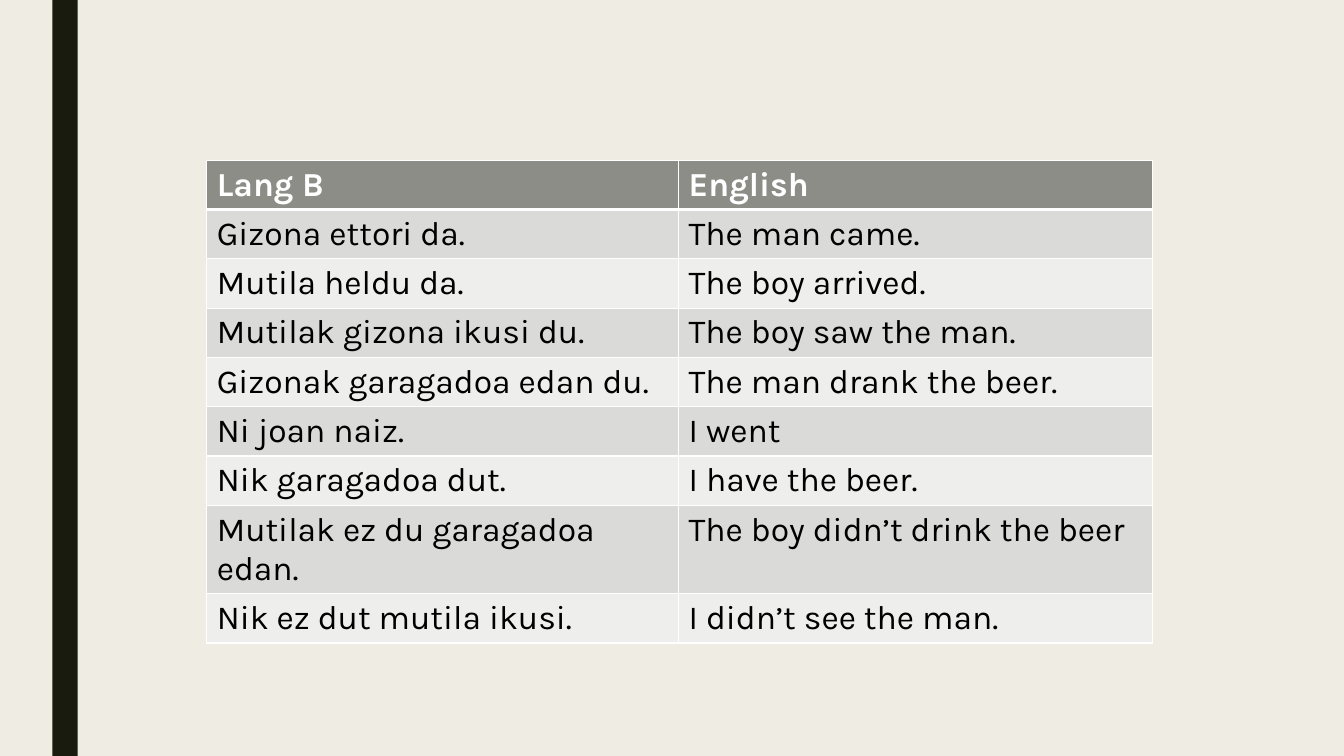
"""Build a slide with a table of Lang B sentences and their English translations."""
from dataclasses import dataclass

from pptx import Presentation
from pptx import util as u
from pptx.dml.color import RGBColor
from pptx.enum import shapes
from pptx.oxml import ns, xmlchemy
from pptx.slide import Slide
from pptx.table import _Cell

BACKGROUND = RGBColor(0xEF, 0xED, 0xE3)
BAR = RGBColor(0x19, 0x1B, 0x0E)
HEADER = RGBColor(0x8C, 0x8D, 0x86)
BAND_DARK = RGBColor(0xDA, 0xDB, 0xD9)
BAND_LIGHT = RGBColor(0xEE, 0xEE, 0xED)
WHITE = RGBColor(0xFF, 0xFF, 0xFF)
BLACK = RGBColor(0x00, 0x00, 0x00)

FONT = "Karla"
FONT_SIZE = u.Pt(24)
ROW_HEIGHT = u.Inches(0.41)
COLUMN_WIDTHS = (u.Inches(4.68), u.Inches(4.7))


@dataclass(frozen=True)
class Sentence:
    lang_b: str
    english: str


@dataclass(frozen=True)
class RowStyle:
    fill: RGBColor
    color: RGBColor
    bold: bool = False
    top: float = 1
    bottom: float = 1


SENTENCES = [
    Sentence("Lang B", "English"),
    Sentence("Gizona ettori da.", "The man came."),
    Sentence("Mutila heldu da.", "The boy arrived."),
    Sentence("Mutilak gizona ikusi du.", "The boy saw the man."),
    Sentence("Gizonak garagadoa edan du.", "The man drank the beer."),
    Sentence("Ni joan naiz.", "I went"),
    Sentence("Nik garagadoa dut.", "I have the beer."),
    Sentence("Mutilak ez du garagadoa edan.", "The boy didn’t drink the beer"),
    Sentence("Nik ez dut mutila ikusi.", "I didn’t see the man."),
]


def row_style(row: int) -> RowStyle:
    if row == 0:
        return RowStyle(HEADER, WHITE, bold=True, bottom=3)
    fill = BAND_DARK if row % 2 else BAND_LIGHT
    return RowStyle(fill, BLACK, top=3 if row == 1 else 1)


def add_border(cell: _Cell, side: str, width: float) -> None:
    ln = xmlchemy.OxmlElement(f"a:ln{side}")
    ln.set("w", str(u.Pt(width)))
    solid = xmlchemy.OxmlElement("a:solidFill")
    color = xmlchemy.OxmlElement("a:srgbClr")
    color.set("val", str(WHITE))
    solid.append(color)
    ln.append(solid)
    cell._tc.get_or_add_tcPr().append(ln)


def draw_cell(cell: _Cell, words: str, style: RowStyle) -> None:
    borders = {"L": 1, "R": 1, "T": style.top, "B": style.bottom}
    for side, width in borders.items():
        add_border(cell, side, width)
    cell.fill.solid()
    cell.fill.fore_color.rgb = style.fill
    r = cell.text_frame.paragraphs[0].add_run()
    r.text = words
    r.font.name = FONT
    r.font.size = FONT_SIZE
    r.font.bold = style.bold
    r.font.color.rgb = style.color


def draw_bar(s: Slide, height: int) -> None:
    sp = s.shapes.add_shape(
        shapes.MSO_SHAPE.RECTANGLE, u.Inches(0.52), 0, u.Inches(0.25), height
    )
    sp.shadow.inherit = False
    sp.fill.solid()
    sp.fill.fore_color.rgb = BAR
    sp.line.fill.background()


def draw_table(s: Slide, sentences: list[Sentence]) -> None:
    table = s.shapes.add_table(
        len(sentences), len(COLUMN_WIDTHS), u.Inches(2.05), u.Inches(1.59),
        sum(COLUMN_WIDTHS), ROW_HEIGHT * len(sentences),
    ).table
    for column, width in zip(table.columns, COLUMN_WIDTHS):
        column.width = width
    for row, sentence in enumerate(sentences):
        style = row_style(row)
        draw_cell(table.cell(row, 0), sentence.lang_b, style)
        draw_cell(table.cell(row, 1), sentence.english, style)


def main() -> None:
    prs = Presentation()
    prs.slide_width, prs.slide_height = u.Inches(13.33), u.Inches(7.5)
    s = prs.slides.add_slide(prs.slide_layouts[6])
    s.background.fill.solid()
    s.background.fill.fore_color.rgb = BACKGROUND
    draw_bar(s, prs.slide_height)
    draw_table(s, SENTENCES)
    prs.save("out.pptx")


if __name__ == "__main__":
    main()
